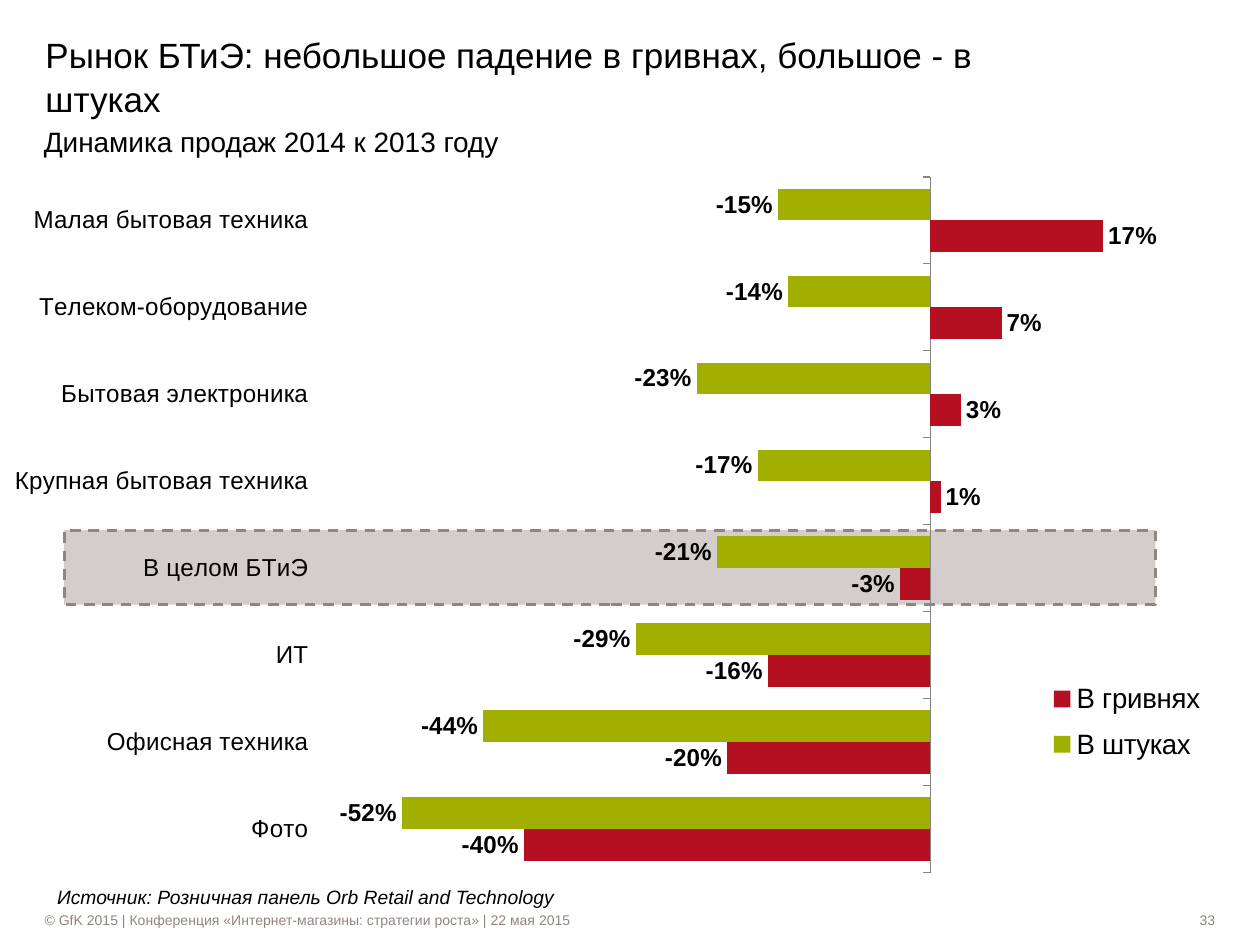
from lxml.etree import SubElement
from pptx import Presentation
from pptx.chart.data import CategoryChartData as ChartData
from pptx.dml.color import RGBColor as RGB
from pptx.enum.chart import XL_CHART_TYPE as Kind, XL_LABEL_POSITION as Spot
from pptx.enum.chart import XL_LEGEND_POSITION as Side, XL_TICK_LABEL_POSITION as Tick
from pptx.enum.chart import XL_TICK_MARK as Mark
from pptx.enum.dml import MSO_LINE as Dash
from pptx.enum.shapes import MSO_SHAPE as Form
from pptx.enum.text import MSO_ANCHOR as Anchor, PP_ALIGN as Align
from pptx.oxml.ns import qn
from pptx.util import Pt

BLACK = RGB(0x00, 0x00, 0x00)
WHITE = RGB(0xFF, 0xFF, 0xFF)
GRAY = RGB(0x92, 0x85, 0x80)
AXIS = RGB(0x86, 0x86, 0x86)
BAND = RGB(0xD3, 0xCE, 0xCC)
GREEN = RGB(0xA1, 0xAF, 0x00)
RED = RGB(0xB5, 0x0F, 0x22)
FONT = "Arial"

CATS = ["Малая бытовая техника", "Телеком-оборудование", "Бытовая электроника",
        "Крупная бытовая техника", "В целом БТиЭ", "ИТ", "Офисная техника", "Фото"]
SERIES = [
    ("В штуках", GREEN, [-0.15, -0.14, -0.23, -0.17, -0.21, -0.29, -0.44, -0.52]),
    ("В гривнях", RED, [0.17, 0.07, 0.03, 0.01, -0.03, -0.16, -0.2, -0.4]),
]


def style(font, size, color=BLACK, bold=False, italic=False):
    font.name, font.size = FONT, Pt(size)
    font.bold, font.italic = bold, italic
    font.color.rgb = color


def place(shape, box):
    shape.left, shape.top, shape.width, shape.height = map(Pt, box)


def write(shape, text, size, align=Align.LEFT, anchor=Anchor.TOP, inset=True,
          space=1.0, **look):
    frame = shape.text_frame
    frame.word_wrap = True
    frame.vertical_anchor = anchor
    if not inset:
        frame.margin_left = frame.margin_right = 0
        frame.margin_top = frame.margin_bottom = 0
    para = frame.paragraphs[0]
    para.alignment, para.line_spacing = align, space
    run = para.add_run()
    run.text = text
    style(run.font, size, **look)


def add_text(slide, box, text, size, **look):
    write(slide.shapes.add_textbox(*map(Pt, box)), text, size, **look)


def add_rect(slide, box, fill):
    rect = slide.shapes.add_shape(Form.RECTANGLE, *map(Pt, box))
    rect.shadow.inherit = False
    rect.fill.solid()
    rect.fill.fore_color.rgb = fill
    rect.line.fill.background()
    return rect


def add_foot(slide, box, text, align):
    write(add_rect(slide, box, WHITE), text, 8, align=align,
          anchor=Anchor.MIDDLE, inset=False, color=GRAY)


def add_band(slide, box):
    line = add_rect(slide, box, BAND).line
    line.color.rgb = GRAY
    line.width = Pt(1.5)
    line.dash_style = Dash.DASH


def set_layout(part, x, y, w, h, inner=False):
    """Fix the place of a chart part, in fractions of the chart."""
    node = part.find(qn("c:layout"))
    if node is None:
        node = SubElement(part, qn("c:layout"))
        part.remove(node)
        at = 1 if part.tag == qn("c:legend") else 0
        part.insert(at, node)
    for old in list(node):
        node.remove(old)
    manual = SubElement(node, qn("c:manualLayout"))
    pairs = [("layoutTarget", "inner")] if inner else []
    pairs += [("xMode", "edge"), ("yMode", "edge"),
              ("x", x), ("y", y), ("w", w), ("h", h)]
    for name, value in pairs:
        SubElement(manual, qn("c:" + name)).set("val", str(value))


def format_axes(chart):
    cat, val = chart.category_axis, chart.value_axis
    cat.reverse_order = True
    cat.tick_label_position = Tick.LOW
    cat.major_tick_mark = Mark.OUTSIDE
    cat.format.line.color.rgb = AXIS
    style(cat.tick_labels.font, 14)
    val.minimum_scale, val.maximum_scale = -0.6, 0.3
    val.has_major_gridlines = False
    val.visible = False


def format_bars(chart):
    plot = chart.plots[0]
    plot.gap_width, plot.overlap = 74, 0
    plot.vary_by_categories = False
    for bars, (_, color, _) in zip(plot.series, SERIES):
        bars.invert_if_negative = False
        bars.format.fill.solid()
        bars.format.fill.fore_color.rgb = color
        labels = bars.data_labels
        labels.show_value = True
        labels.number_format, labels.number_format_is_linked = "0%", False
        labels.position = Spot.OUTSIDE_END
        style(labels.font, 14, bold=True)


def add_bars(slide, box):
    data = ChartData(number_format="0%")
    data.categories = CATS
    for name, _, values in SERIES:
        data.add_series(name, values)
    chart = slide.shapes.add_chart(Kind.BAR_CLUSTERED, *map(Pt, box), data).chart
    chart.has_title = False
    style(chart.font, 12)
    format_axes(chart)
    format_bars(chart)
    chart.has_legend = True
    legend = chart.legend
    legend.position = Side.RIGHT
    legend.include_in_layout = False
    style(legend.font, 16)
    area = chart.plots[0]._element.getparent()
    set_layout(area, 0.24, 0, 0.76, 0.99, inner=True)
    set_layout(legend._element, 0.84, 0.7, 0.14, 0.15)


def main():
    deck = Presentation()
    deck.slide_width, deck.slide_height = Pt(720), Pt(540)
    slide = deck.slides.add_slide(deck.slide_layouts[5])
    title = slide.shapes.title
    place(title, (26, 9.5, 566.5, 59))
    write(title, "Рынок БТиЭ: небольшое падение в гривнах, большое - в штуках", 20,
          anchor=Anchor.BOTTOM, inset=False, space=1.05)
    add_foot(slide, (25.5, 520, 556, 11.5),
             "© GfK 2015 | Конференция «Интернет-магазины: стратегии роста» | 22 мая 2015",
             Align.LEFT)
    add_foot(slide, (592.5, 520, 102, 11.5), "33", Align.RIGHT)
    add_band(slide, (36.75, 303, 623.5, 42.5))
    add_text(slide, (18, 67.75, 623.5, 26.5), "Динамика продаж 2014 к 2013 году", 16)
    add_bars(slide, (8.5, 100.75, 697.5, 402))
    add_text(slide, (25.5, 502.5, 669, 11.5),
             "Источник: Розничная панель Orb Retail and Technology", 11, italic=True)
    deck.save("out.pptx")


if __name__ == "__main__":
    main()
